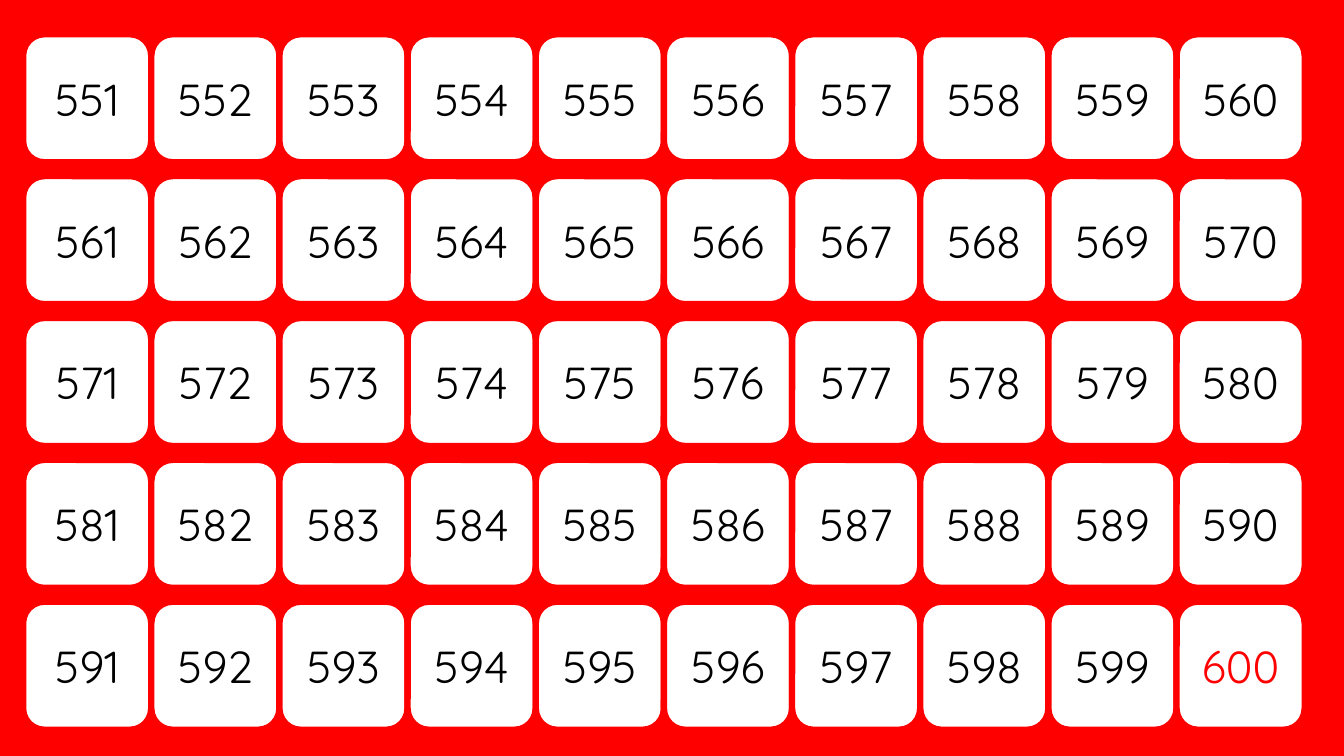
"""Build a number grid slide that counts from 551 to 600."""
import dataclasses
import typing

import pptx
import pptx.dml.color
import pptx.enum.shapes
import pptx.enum.text
import pptx.slide
import pptx.util

Inches = pptx.util.Inches
RGB = pptx.dml.color.RGBColor


@dataclasses.dataclass(frozen=True)
class Theme:
    red: RGB = RGB(0xFF, 0x00, 0x00)
    white: RGB = RGB(0xFF, 0xFF, 0xFF)
    black: RGB = RGB(0x00, 0x00, 0x00)
    font: str = "Quicksand"
    number_size: pptx.util.Pt = pptx.util.Pt(32)
    border: pptx.util.Pt = pptx.util.Pt(4.5)


@dataclasses.dataclass(frozen=True)
class NumberCard:
    number: int
    left: float
    top: float
    color: RGB


THEME = Theme()
FIRST, LAST, COLUMNS = 551, 600, 10
ROWS = (LAST - FIRST + 1) // COLUMNS
CARD_SIZE = 1.27
LEFT, RIGHTMOST = 0.23, 11.67
TOP, LOWEST = 0.34, 5.97
COLUMN_STEP = (RIGHTMOST - LEFT) / (COLUMNS - 1)
ROW_STEP = (LOWEST - TOP) / (ROWS - 1)


def apply_format(target: typing.Any, values: dict[str, typing.Any]) -> None:
    for attribute, value in values.items():
        setattr(target, attribute, value)


def number_cards() -> typing.Iterator[NumberCard]:
    for index, number in enumerate(range(FIRST, LAST + 1)):
        row, column = divmod(index, COLUMNS)
        yield NumberCard(
            number,
            LEFT + column * COLUMN_STEP,
            TOP + row * ROW_STEP,
            THEME.red if number == LAST else THEME.black,
        )


def draw_card(slide: pptx.slide.Slide, card: NumberCard) -> None:
    tile = slide.shapes.add_shape(
        pptx.enum.shapes.MSO_SHAPE.ROUNDED_RECTANGLE,
        Inches(card.left), Inches(card.top), Inches(CARD_SIZE), Inches(CARD_SIZE),
    )
    tile.shadow.inherit = False
    tile.fill.solid()
    tile.fill.fore_color.rgb = THEME.white
    tile.line.color.rgb = THEME.red
    tile.line.width = THEME.border
    tile.text_frame.vertical_anchor = pptx.enum.text.MSO_ANCHOR.MIDDLE
    label = tile.text_frame.paragraphs[0]
    label.alignment = pptx.enum.text.PP_ALIGN.CENTER
    digits = label.add_run()
    digits.text = str(card.number)
    apply_format(digits.font, {"name": THEME.font, "size": THEME.number_size})
    digits.font.color.rgb = card.color


def main() -> None:
    deck = pptx.Presentation()
    apply_format(deck, {"slide_width": Inches(13.33), "slide_height": Inches(7.5)})
    slide = deck.slides.add_slide(deck.slide_layouts[6])
    slide.background.fill.solid()
    slide.background.fill.fore_color.rgb = THEME.red
    for card in number_cards():
        draw_card(slide, card)
    deck.save("out.pptx")


if __name__ == "__main__":
    main()
